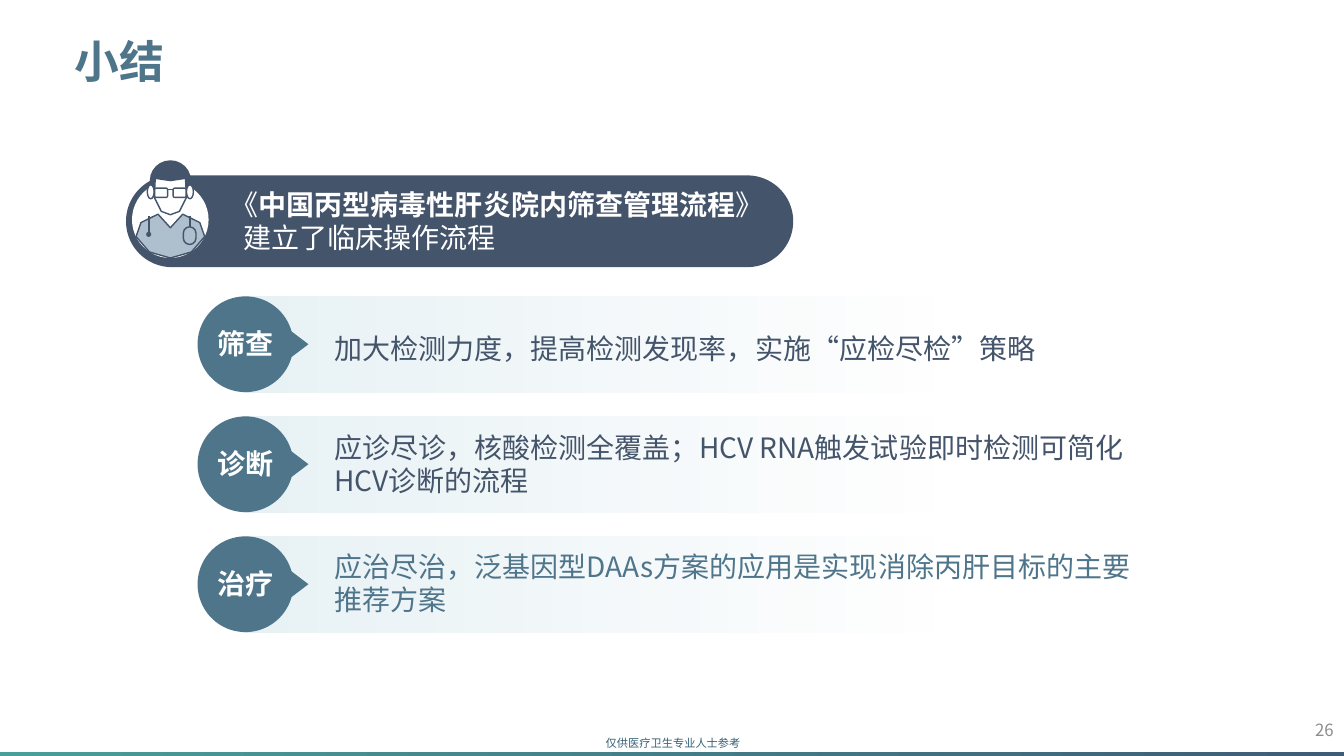
"""Builds the summary slide on hepatitis C screening, diagnosis and treatment."""
from lxml.etree import SubElement
from pptx import Presentation
from pptx.dml.color import RGBColor
from pptx.enum.lang import MSO_LANGUAGE_ID as LANG
from pptx.enum.shapes import MSO_CONNECTOR as CONNECTOR, MSO_SHAPE as SHAPE
from pptx.enum.text import MSO_ANCHOR as ANCHOR, PP_ALIGN as ALIGN
from pptx.oxml.ns import qn
from pptx.util import Pt

TEAL = RGBColor(0x48, 0x9E, 0x98)
SLATE = RGBColor(0x3E, 0x5C, 0x76)
STEEL = RGBColor(0x4F, 0x75, 0x8B)
NAVY = RGBColor(0x44, 0x54, 0x6A)
BAND = RGBColor(0x07, 0x72, 0x96)
COAT = RGBColor(0xAE, 0xC0, 0xCE)
FOOTER = RGBColor(0x35, 0x60, 0x77)
GREY = RGBColor(0x8C, 0x8C, 0x8C)
WHITE = RGBColor(0xFF, 0xFF, 0xFF)
SANS = "Noto Sans CJK SC"

ROW_TOP, ROW_PITCH, ROW_HEIGHT = 211.7, 85.7, 68.4
ROWS = [
    ("筛查", "加大检测力度，提高检测发现率，实施“应检尽检”策略", NAVY, 221, 579, 1.5),
    ("诊断", "应诊尽诊，核酸检测全覆盖；HCV RNA触发试验即时检测可简化HCV诊断的流程",
     NAVY, 303.8, 587.5, None),
    ("治疗", "应治尽治，泛基因型DAAs方案的应用是实现消除丙肝目标的主要推荐方案",
     STEEL, 388.8, 592.5, None),
]

DOCTOR_X = 121.7
HALF_FACE = [(0, 129), (10.8, 127.4), (11.5, 141), (6.5, 151), (0, 153.4)]
HALF_COAT = [(0, 162.7), (8.8, 153), (21, 159), (24.5, 169), (15, 180), (0, 184.3)]


def paint(sp, color, line=None):
    """Give a shape its fill and outline; None leaves either out."""
    sp.shadow.inherit = False
    if color is None:
        sp.fill.background()
    else:
        sp.fill.solid()
        sp.fill.fore_color.rgb = color
    if line is None:
        sp.line.fill.background()
    else:
        sp.line.color.rgb = line
        sp.line.width = Pt(1)
    return sp


def add_shape(s, kind, box, color, line=None):
    """Add a painted preset shape."""
    return paint(s.shapes.add_shape(kind, *map(Pt, box)), color, line)


def add_gradient_bar(s, box, colors, alphas=()):
    """Add a rectangle shaded from left to right."""
    sp = add_shape(s, SHAPE.RECTANGLE, box, colors[0])
    sp.fill.gradient()
    sp.fill.gradient_angle = 0
    for stop, color in zip(sp.fill.gradient_stops, colors):
        stop.color.rgb = color
    for clr, alpha in zip(sp._element.iter(qn("a:srgbClr")), alphas):
        SubElement(clr, qn("a:alpha")).set("val", str(alpha * 1000))


def add_mirrored(s, half, color):
    """Add an outline whose left side mirrors the given right half."""
    sides = half + [(-dx, y) for dx, y in reversed(half[1:-1])]
    points = [(Pt(DOCTOR_X + dx), Pt(y)) for dx, y in sides]
    builder = s.shapes.build_freeform(*points[0])
    builder.add_line_segments(points[1:])
    paint(builder.convert_to_shape(), color, NAVY)


def add_line(s, x1, y1, x2, y2):
    """Add a thin dark line."""
    line = s.shapes.add_connector(CONNECTOR.STRAIGHT, *map(Pt, (x1, y1, x2, y2)))
    line.line.color.rgb = NAVY
    line.line.width = Pt(1)
    SubElement(line._element.spPr, qn("a:effectLst"))


def add_doctor(s):
    """Add the doctor figure inside a white disc."""
    add_shape(s, SHAPE.OVAL, (94.3, 129.6, 54.7, 54.7), WHITE)
    add_shape(s, SHAPE.OVAL, (107, 114.5, 29.4, 29), NAVY)
    for side in (-1, 1):
        add_shape(s, SHAPE.OVAL, (DOCTOR_X + side * 14 - 2.5, 132, 5, 10), WHITE, NAVY)
    add_mirrored(s, HALF_FACE, WHITE)
    add_mirrored(s, HALF_COAT, COAT)
    for side in (-1, 1):
        lens = (DOCTOR_X + side * 6.6 - 4.6, 134.4, 9.2, 6.6)
        add_shape(s, SHAPE.ROUNDED_RECTANGLE, lens, WHITE, NAVY)
    add_line(s, DOCTOR_X - 2, 135.4, DOCTOR_X + 2, 135.4)
    add_line(s, 106.3, 154, 106.3, 166)
    add_shape(s, SHAPE.OVAL, (104.4, 165.6, 3.6, 3.6), NAVY)
    add_line(s, 135.7, 154, 135.7, 162)
    loop = add_shape(s, SHAPE.ROUNDED_RECTANGLE, (131, 162, 9, 12.6), None, NAVY)
    loop.adjustments[0] = 0.5


def add_run(p, text, size, color, bold=False, font=SANS):
    """Append a formatted run to a paragraph."""
    r = p.add_run()
    r.text = text
    r.font.size, r.font.bold, r.font.name = Pt(size), bold, font
    r.font.color.rgb = color
    r.font.language_id = LANG.SIMPLIFIED_CHINESE
    SubElement(r._r.rPr, qn("a:ea")).set("typeface", SANS)


def add_text(s, box, runs, size, color, align=ALIGN.LEFT, anchor=ANCHOR.TOP,
             spacing=None, wrap=True, font=SANS):
    """Add a text box with one paragraph of (text, bold) runs."""
    tf = s.shapes.add_textbox(*map(Pt, box)).text_frame
    tf.word_wrap = wrap
    tf.vertical_anchor = anchor
    p = tf.paragraphs[0]
    p.alignment = align
    if spacing:
        p.line_spacing = spacing
    for text, bold in runs:
        add_run(p, text, size, color, bold, font)
    return tf


def add_heading(s):
    """Add the rounded heading with the doctor figure."""
    pill = add_shape(s, SHAPE.ROUNDED_RECTANGLE, (90, 125.3, 476.6, 65.5), NAVY)
    pill.adjustments[0] = 0.5
    add_doctor(s)
    runs = [("《", False), ("中国丙型病毒性肝炎院内筛查管理流程", True), ("》", False)]
    tf = add_text(s, (157.7, 130.3, 405.4, 55.4), runs, 20, WHITE)
    p = tf.add_paragraph()
    p._p.get_or_add_pPr().set("marL", str(Pt(9)))
    add_run(p, "建立了临床操作流程", 20, WHITE)


def add_row(s, top, label, body, color, body_top, body_width, spacing):
    """Add one step: shaded band, round label with pointer, and text."""
    add_gradient_bar(s, (175, top, 522.7, ROW_HEIGHT), (BAND, BAND), (10, 0))
    pointer = add_shape(s, SHAPE.ISOSCELES_TRIANGLE, (188.6, top + 21.6, 38.2, 25.2), STEEL)
    pointer.rotation = 90
    add_shape(s, SHAPE.OVAL, (141.1, top, ROW_HEIGHT, ROW_HEIGHT), STEEL)
    add_text(s, (146.2, top + 18, 58.3, 31.5), [(label, True)], 20, WHITE, ALIGN.CENTER)
    add_text(s, (231.8, body_top, body_width, 55.4), [(body, False)], 20, color,
             spacing=spacing)


def main():
    """Build the slide and save it."""
    prs = Presentation()
    prs.slide_width, prs.slide_height = Pt(960), Pt(540)
    s = prs.slides.add_slide(prs.slide_layouts[6])
    add_gradient_bar(s, (-0.7, 537.1, 964, 5), (TEAL, SLATE))
    add_text(s, (425.5, 522.7, 111.6, 17), [("仅供医疗卫生专业人士参考", False)], 8, FOOTER,
             wrap=False, font="Arial")
    add_text(s, (743.8, 506.9, 216, 28.8), [("26", False)], 12, GREY, ALIGN.RIGHT,
             ANCHOR.MIDDLE)
    add_text(s, (46.1, 28.8, 782.6, 33.8), [("小结", True)], 32, STEEL,
             anchor=ANCHOR.MIDDLE, spacing=0.9)
    add_heading(s)
    for i, row in enumerate(ROWS):
        add_row(s, ROW_TOP + i * ROW_PITCH, *row)
    prs.save("out.pptx")


if __name__ == "__main__":
    main()
